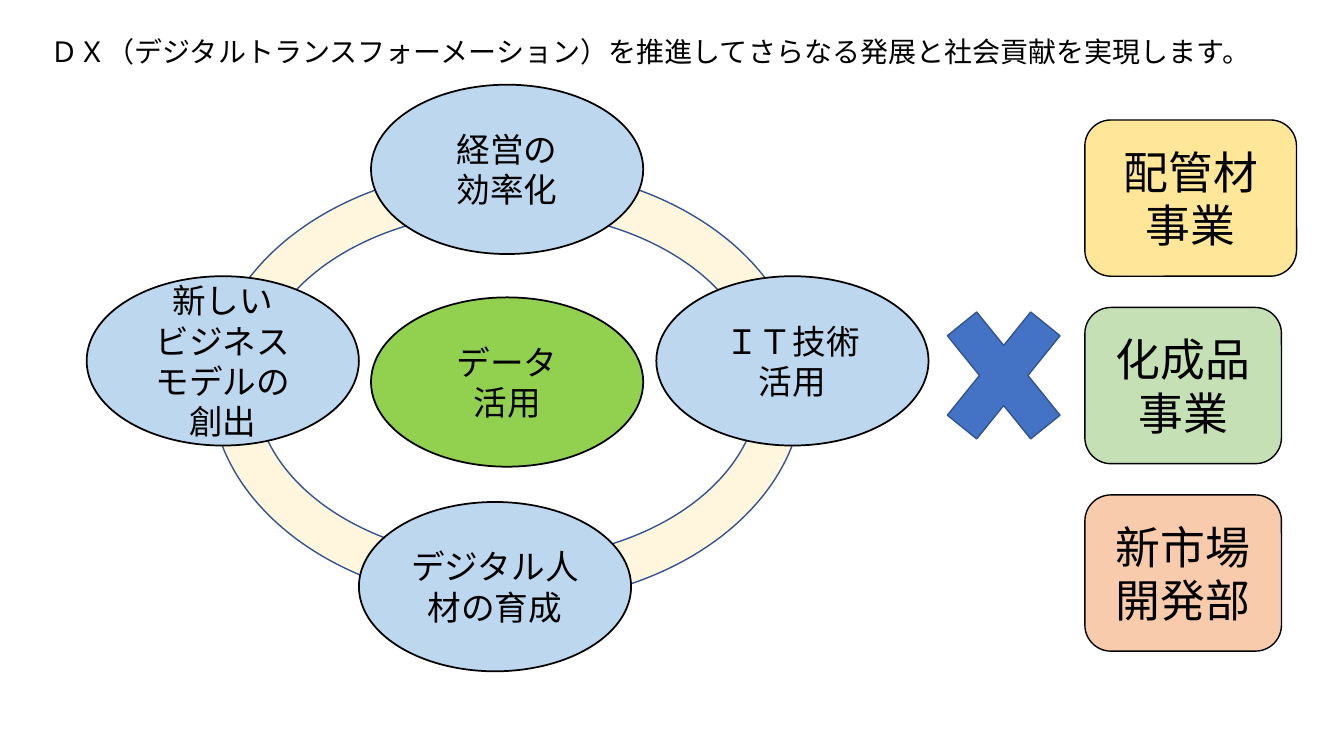
import pptx
import pptx.util
import pptx.dml.color
import pptx.enum.shapes
import pptx.enum.text
import pptx.oxml.ns
from lxml import etree

Inches = pptx.util.Inches
RGBColor = pptx.dml.color.RGBColor
SHAPE = pptx.enum.shapes.MSO_SHAPE
ALIGN = pptx.enum.text.PP_ALIGN
ANCHOR = pptx.enum.text.MSO_ANCHOR
qn = pptx.oxml.ns.qn

BLACK = RGBColor(0x00, 0x00, 0x00)
YELLOW = RGBColor(0xFF, 0xE6, 0x99)
GREEN = RGBColor(0x92, 0xD0, 0x50)
PALE_BLUE = RGBColor(0xBD, 0xD7, 0xEE)
PALE_GREEN = RGBColor(0xC5, 0xE0, 0xB4)
PEACH = RGBColor(0xF8, 0xCB, 0xAD)
BLUE = RGBColor(0x44, 0x72, 0xC4)
NAVY = RGBColor(0x32, 0x54, 0x91)


class Slide:
    font = "Noto Sans CJK JP"

    def __init__(self, prs):
        self.s = prs.slides.add_slide(prs.slide_layouts[6])

    def set_lines(self, tf, lines, size, align):
        tf.word_wrap = True
        for i, line in enumerate(lines):
            p = tf.paragraphs[0] if i == 0 else tf.add_paragraph()
            p.text = line
            p.alignment = align
            p.font.size = pptx.util.Pt(size)
            p.font.color.rgb = BLACK
            p.font.name = self.font
            props = p._p.pPr.find(qn("a:defRPr"))
            etree.SubElement(props, qn("a:ea")).set("typeface", self.font)

    def shape(self, kind, box, fill, line, width=1, lines=(), size=24):
        sp = self.s.shapes.add_shape(kind, *map(Inches, box))
        sp.shadow.inherit = False
        sp.fill.solid()
        sp.fill.fore_color.rgb = fill
        sp.line.color.rgb = line
        sp.line.width = pptx.util.Pt(width)
        if lines:
            sp.text_frame.vertical_anchor = ANCHOR.MIDDLE
            self.set_lines(sp.text_frame, lines, size, ALIGN.CENTER)
        return sp

    def ring(self, box, thickness, opacity):
        sp = self.shape(SHAPE.DONUT, box, YELLOW, NAVY)
        sp.adjustments[0] = thickness
        color = sp._element.spPr.find(qn("a:solidFill"))[0]
        etree.SubElement(color, qn("a:alpha")).set("val", str(opacity * 1000))

    def ellipse(self, left, top, fill, lines):
        self.shape(SHAPE.OVAL, (left, top, 2.7, 1.68), fill, BLACK, 1.25, lines)

    def division(self, top, width, fill, name):
        self.shape(SHAPE.ROUNDED_RECTANGLE, (10.76, top, width, 1.55),
                   fill, BLACK, 1, [name], 32)

    def text(self, box, line, size):
        sp = self.s.shapes.add_textbox(*map(Inches, box))
        self.set_lines(sp.text_frame, [line], size, ALIGN.LEFT)


def main():
    prs = pptx.Presentation()
    prs.slide_width = Inches(13.33)
    prs.slide_height = Inches(7.5)
    slide = Slide(prs)

    slide.ring((2.09, 1.66, 5.88, 4.33), 0.101, 33)
    for left, top, fill, lines in (
        (3.68, 2.95, GREEN, ["データ", "活用"]),
        (3.56, 4.98, PALE_BLUE, ["デジタル人材の育成"]),
        (0.86, 2.74, PALE_BLUE, ["新しい", "ビジネス", "モデルの", "創出"]),
        (6.51, 2.74, PALE_BLUE, ["ＩＴ技術", "活用"]),
        (3.68, 0.84, PALE_BLUE, ["経営の", "効率化"]),
    ):
        slide.ellipse(left, top, fill, lines)

    divisions = (
        (2.1, YELLOW, "配管材事業"),
        (1.95, PALE_GREEN, "化成品事業"),
        (1.95, PEACH, "新市場開発部"),
    )
    for i, (width, fill, name) in enumerate(divisions):
        slide.division(1.19 + 1.86 * i, width, fill, name)

    slide.shape(SHAPE.MATH_MULTIPLY, (9.16, 2.74, 1.59, 1.97), BLUE, NAVY)
    slide.text((0.4, 0.29, 12.15, 0.44),
               "ＤＸ（デジタルトランスフォーメーション）を推進してさらなる発展と社会貢献を実現します。", 20)
    prs.save("out.pptx")


if __name__ == "__main__":
    main()
